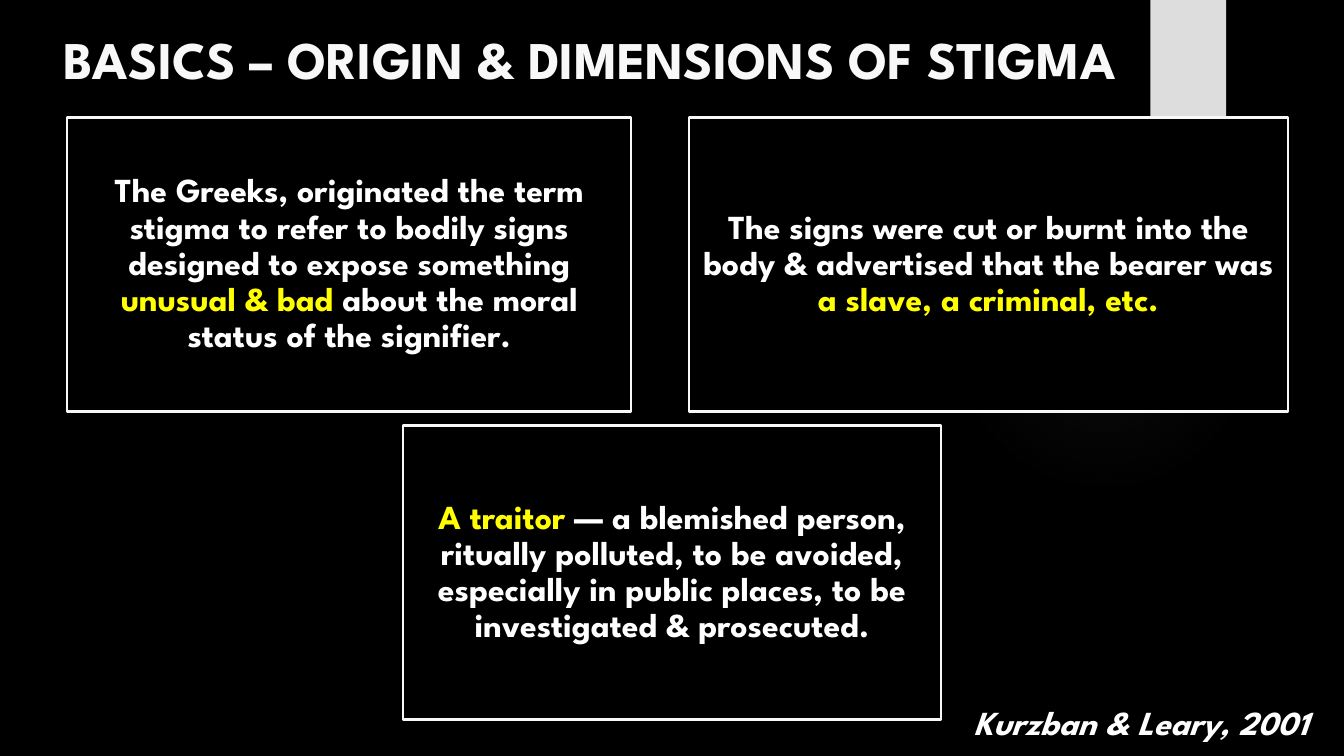
from pptx import Presentation
from pptx.dml.color import RGBColor
from pptx.enum.shapes import MSO_SHAPE
from pptx.enum.text import MSO_ANCHOR, MSO_AUTO_SIZE, PP_ALIGN
from pptx.oxml import parse_xml
from pptx.oxml.ns import nsdecls
from pptx.util import Pt

COLOURS = {
    "background": "000000",
    "outline": "F8F8F8",
    "title": "F8F8F8",
    "text": "FFFFFF",
    "highlight": "FFFF00",
    "bar": "DDDDDD",
    "glow": "666666",
}
BODY_FONT = {"name": "League Spartan", "size": Pt(24), "bold": True}
TITLE_FONT = {**BODY_FONT, "size": Pt(37.8)}
CITATION_FONT = {**BODY_FONT, "italic": True}

CARD_HEIGHT = 210
# Left, top and width of each card, then its pieces of text
CARDS = [
    (48, 84, 403, [
        ("The Greeks, originated the term stigma to refer to bodily signs "
         "designed to expose something ", "text"),
        ("unusual & bad ", "highlight"),
        ("about the moral status of the signifier.", "text"),
    ]),
    (492, 84, 428, [
        ("The signs were cut or burnt into the body & advertised that the "
         "bearer was ", "text"),
        ("a slave, a criminal, etc.", "highlight"),
    ]),
    (288, 304, 384, [
        ("A traitor ", "highlight"),
        ("— a blemished person, ritually polluted, to be avoided, especially "
         "in public places, to be investigated & prosecuted.", "text"),
    ]),
]


def colour(key):
    return RGBColor.from_string(COLOURS[key])


def set_margins(frame, margin):
    for side in ("left", "top", "right", "bottom"):
        setattr(frame, f"margin_{side}", Pt(margin))


def write(paragraph, pieces, font_format):
    for words, colour_key in pieces:
        run = paragraph.add_run()
        run.text = words
        for attribute, value in font_format.items():
            setattr(run.font, attribute, value)
        run.font.color.rgb = colour(colour_key)


def add_plain_shape(slide, preset, left, top, width, height, fill):
    shape = slide.shapes.add_shape(preset, Pt(left), Pt(top), Pt(width), Pt(height))
    shape.shadow.inherit = False
    shape.fill.solid()
    shape.fill.fore_color.rgb = colour(fill)
    shape.line.fill.background()
    return shape


def add_glow(slide, left, top, size):
    glow = add_plain_shape(slide, MSO_SHAPE.OVAL, left, top, size, size, "glow")
    stops = "".join(
        f'<a:gs pos="{position * 1000}"><a:srgbClr val="{COLOURS["glow"]}">'
        f'<a:alpha val="{opacity * 1000}"/></a:srgbClr></a:gs>'
        for position, opacity in [(0, 7), (36, 6), (69, 0)]
    )
    gradient = parse_xml(
        f'<a:gradFill {nsdecls("a")}><a:gsLst>{stops}</a:gsLst><a:path path="circle">'
        '<a:fillToRect l="50000" t="50000" r="50000" b="50000"/></a:path></a:gradFill>'
    )
    properties = glow._element.spPr
    properties.replace(properties.find("{*}solidFill"), gradient)


def add_card(slide, left, top, width, pieces):
    card = add_plain_shape(slide, MSO_SHAPE.RECTANGLE, left, top, width,
                           CARD_HEIGHT, "background")
    card.line.color.rgb = colour("outline")
    card.line.width = Pt(1.5)
    frame = card.text_frame
    frame.word_wrap = True
    frame.vertical_anchor = MSO_ANCHOR.MIDDLE
    set_margins(frame, 7.2)
    statement = frame.paragraphs[0]
    statement.alignment = PP_ALIGN.CENTER
    statement.line_spacing = 0.9
    write(statement, pieces, BODY_FONT)


def add_text(slide, left, top, width, height, words, colour_key, font_format):
    box = slide.shapes.add_textbox(Pt(left), Pt(top), Pt(width), Pt(height))
    write(box.text_frame.paragraphs[0], [(words, colour_key)], font_format)
    return box.text_frame


def main():
    presentation = Presentation()
    presentation.slide_width, presentation.slide_height = Pt(960), Pt(540)
    slide = presentation.slides.add_slide(presentation.slide_layouts[6])
    slide.background.fill.solid()
    slide.background.fill.fore_color.rgb = colour("background")

    # Backdrop
    add_glow(slide, 677.5, 132, 222)
    add_plain_shape(slide, MSO_SHAPE.RECTANGLE, 821.75, 0, 54, 90, "bar")

    # Title
    title = add_text(slide, 1.4, 12, 840, 60,
                     "BASICS – ORIGIN & DIMENSIONS OF STIGMA", "title", TITLE_FONT)
    title.word_wrap = True
    title.vertical_anchor = MSO_ANCHOR.MIDDLE
    title.paragraphs[0].alignment = PP_ALIGN.CENTER
    set_margins(title, 0)

    # Statements
    for card in CARDS:
        add_card(slide, *card)

    # Citation
    citation = add_text(slide, 688.5, 498, 271.5, 36,
                        "Kurzban & Leary, 2001", "text", CITATION_FONT)
    citation.word_wrap = False
    citation.auto_size = MSO_AUTO_SIZE.SHAPE_TO_FIT_TEXT

    presentation.save("out.pptx")


if __name__ == "__main__":
    main()
